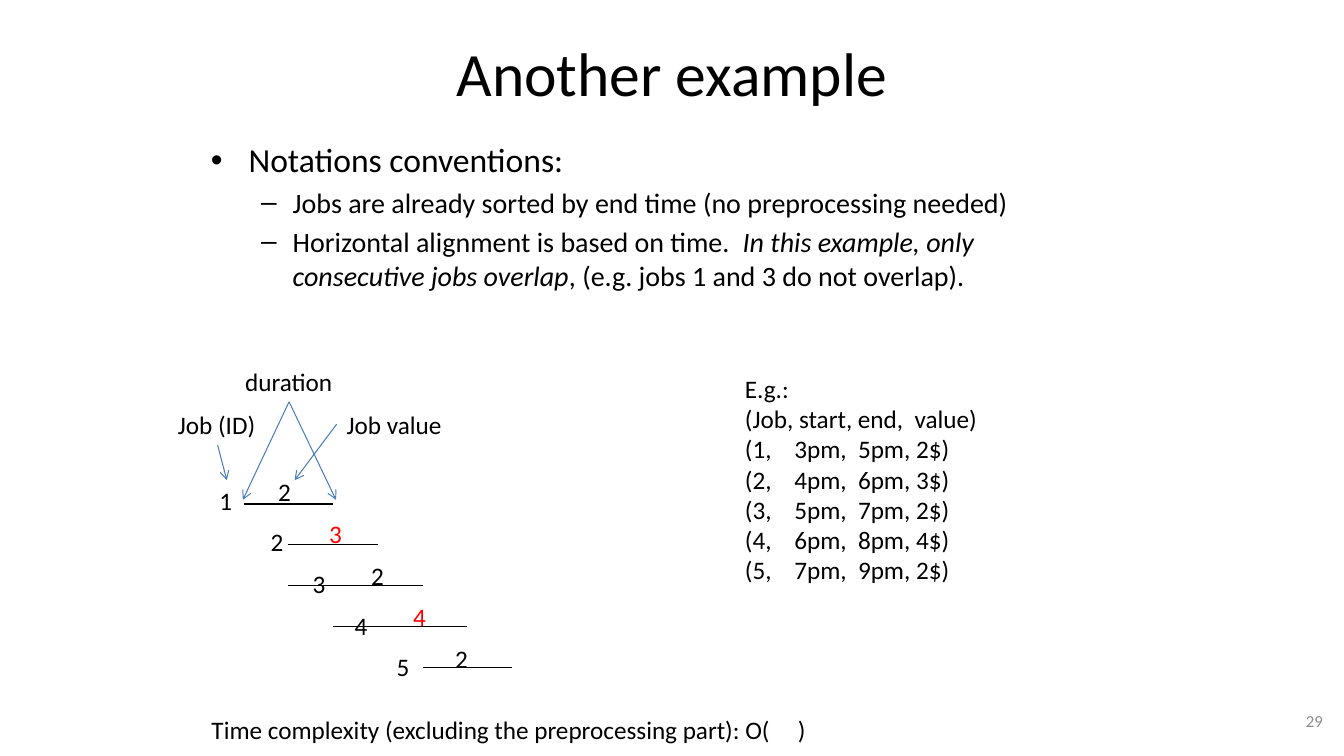
from lxml.etree import SubElement
from pptx import Presentation
from pptx.dml.color import RGBColor
from pptx.enum.shapes import MSO_CONNECTOR as Connector
from pptx.enum.text import MSO_ANCHOR as Anchor, PP_ALIGN as Align
from pptx.oxml.ns import qn
from pptx.util import Pt

BLACK = RGBColor(0x00, 0x00, 0x00)
RED = RGBColor(0xFF, 0x00, 0x00)
GRAY = RGBColor(0x8C, 0x8C, 0x8C)
BLUE = RGBColor(0x4B, 0x7E, 0xBC)

BULLETS = [
    (0, ["Notations conventions:"]),
    (1, ["Jobs are already sorted by end time (no preprocessing needed)"]),
    (1, ["Horizontal alignment is based on time.  ",
         "In this example, only consecutive jobs overlap",
         ", (e.g. jobs 1 and 3 do not overlap)."]),
]
BULLET_LEVELS = [("•", 24, 27, -27), ("–", 20, 58.5, -22.5)]
JOB_VALUES = [2, 3, 2, 4, 2]
JOB_LINES = [(0, 2), (1, 3), (1, 4), (2, 5), (4, 6)]
EXAMPLE = [
    "E.g.:",
    "(Job, start, end,  value)",
    "(1,    3pm,  5pm, 2$)",
    "(2,    4pm,  6pm, 3$)",
    "(3,    5pm,  7pm, 2$)",
    "(4,    6pm,  8pm, 4$)",
    "(5,    7pm,  9pm, 2$)",
]
ARROWS = [
    (240.5, 303, 210.5, 343),
    (155.5, 318, 162, 343),
    (206.5, 287, 173.5, 357),
    (206.5, 287, 240, 357),
]


class SlideBuilder:
    font_name = "Calibri"

    def __init__(self, slide):
        self.slide = slide

    def set_font(self, paragraph, size, color=BLACK):
        font = paragraph.font
        font.name = self.font_name
        font.size = Pt(size)
        font.color.rgb = color

    def frame(self, left, top, width, height, wrap=True, anchor=Anchor.TOP):
        shape = self.slide.shapes.add_textbox(Pt(left), Pt(top), Pt(width), Pt(height))
        text_frame = shape.text_frame
        text_frame.word_wrap = wrap
        text_frame.vertical_anchor = anchor
        return text_frame

    def text(self, lines, left, top, width, height=29, size=18, color=BLACK,
             align=Align.LEFT, wrap=False, anchor=Anchor.TOP):
        text_frame = self.frame(left, top, width, height, wrap, anchor)
        text_frame.text = "\n".join(lines)
        for paragraph in text_frame.paragraphs:
            paragraph.alignment = align
            self.set_font(paragraph, size, color)

    def bullets(self, items, left, top, width, height):
        text_frame = self.frame(left, top, width, height)
        for index, (level, parts) in enumerate(items):
            paragraph = text_frame.add_paragraph() if index else text_frame.paragraphs[0]
            symbol, size, margin, indent = BULLET_LEVELS[level]
            paragraph.level = level
            paragraph.space_before = Pt(size * 0.2)
            self.set_font(paragraph, size)
            for position, part in enumerate(parts):
                run = paragraph.add_run()
                run.text = part
                if position == 1:
                    run.font.italic = True
            properties = paragraph._p.get_or_add_pPr()
            properties.set("marL", str(Pt(margin)))
            properties.set("indent", str(Pt(indent)))
            bullet_font = properties.makeelement(qn("a:buFont"), {"typeface": "Arial"})
            bullet = properties.makeelement(qn("a:buChar"), {"char": symbol})
            defaults = properties.find(qn("a:defRPr"))
            defaults.addprevious(bullet_font)
            defaults.addprevious(bullet)

    def border(self, properties, side, visible):
        line = SubElement(properties, qn(f"a:ln{side}"), w=str(Pt(1)))
        if visible:
            fill = SubElement(line, qn("a:solidFill"))
            SubElement(fill, qn("a:srgbClr"), val=str(BLACK))
        else:
            SubElement(line, qn("a:noFill"))

    def timeline(self, lines, left, top, columns, column_width, row_height):
        rows = len(lines) - 1
        table = self.slide.shapes.add_table(
            rows, columns, Pt(left), Pt(top),
            Pt(columns * column_width), Pt(rows * row_height)).table
        table.first_row = False
        table.horz_banding = False
        for column in table.columns:
            column.width = Pt(column_width)
        for index, row in enumerate(table.rows):
            row.height = Pt(row_height)
            for position, cell in enumerate(row.cells):
                properties = cell._tc.get_or_add_tcPr()
                above, below = (start <= position < end
                                for start, end in lines[index:index + 2])
                for side, visible in zip("LRTB", (False, False, above, below)):
                    self.border(properties, side, visible)
                cell.fill.background()

    def arrow(self, *ends):
        connector = self.slide.shapes.add_connector(
            Connector.STRAIGHT, *(Pt(value) for value in ends))
        connector.line.color.rgb = BLUE
        connector.line.width = Pt(0.75)
        properties = connector._element.spPr
        SubElement(properties.find(qn("a:ln")), qn("a:tailEnd"), type="arrow")
        SubElement(properties, qn("a:effectLst"))


def main():
    presentation = Presentation()
    presentation.slide_width = Pt(960)
    presentation.slide_height = Pt(540)
    slide = presentation.slides.add_slide(presentation.slide_layouts[6])
    builder = SlideBuilder(slide)

    builder.text(["Another example"], 48, 6, 864, 90, size=44,
                 align=Align.CENTER, wrap=True, anchor=Anchor.MIDDLE)
    builder.bullets(BULLETS, 143.5, 96, 648, 132)
    builder.text(["29"], 728, 500.5, 224, size=12, color=GRAY,
                 align=Align.RIGHT, wrap=True, anchor=Anchor.MIDDLE)

    builder.timeline(JOB_LINES, 174, 360, 6, 32, 29.16)
    for index, value in enumerate(JOB_VALUES):
        left = 198 + 30 * index if index else 191.5
        top = 337 + 29.7 * index
        color = RED if index % 2 else BLACK
        builder.text([str(value)], left, top, 23.5, color=color)
        builder.text([str(index + 1)], left - 41.8, top + 6, 23.5)

    builder.text(["Job value"], 240.5, 289, 83.5)
    builder.text(["Job (ID)"], 120, 289, 70.5)
    builder.text(["duration"], 168, 258, 77.5)
    for ends in ARROWS:
        builder.arrow(*ends)

    builder.text(EXAMPLE, 525, 263, 182, 160)
    builder.text(["Time complexity (excluding the preprocessing part): O(     )"],
                 144, 507, 551.5, wrap=True)
    presentation.save("out.pptx")


if __name__ == "__main__":
    main()
